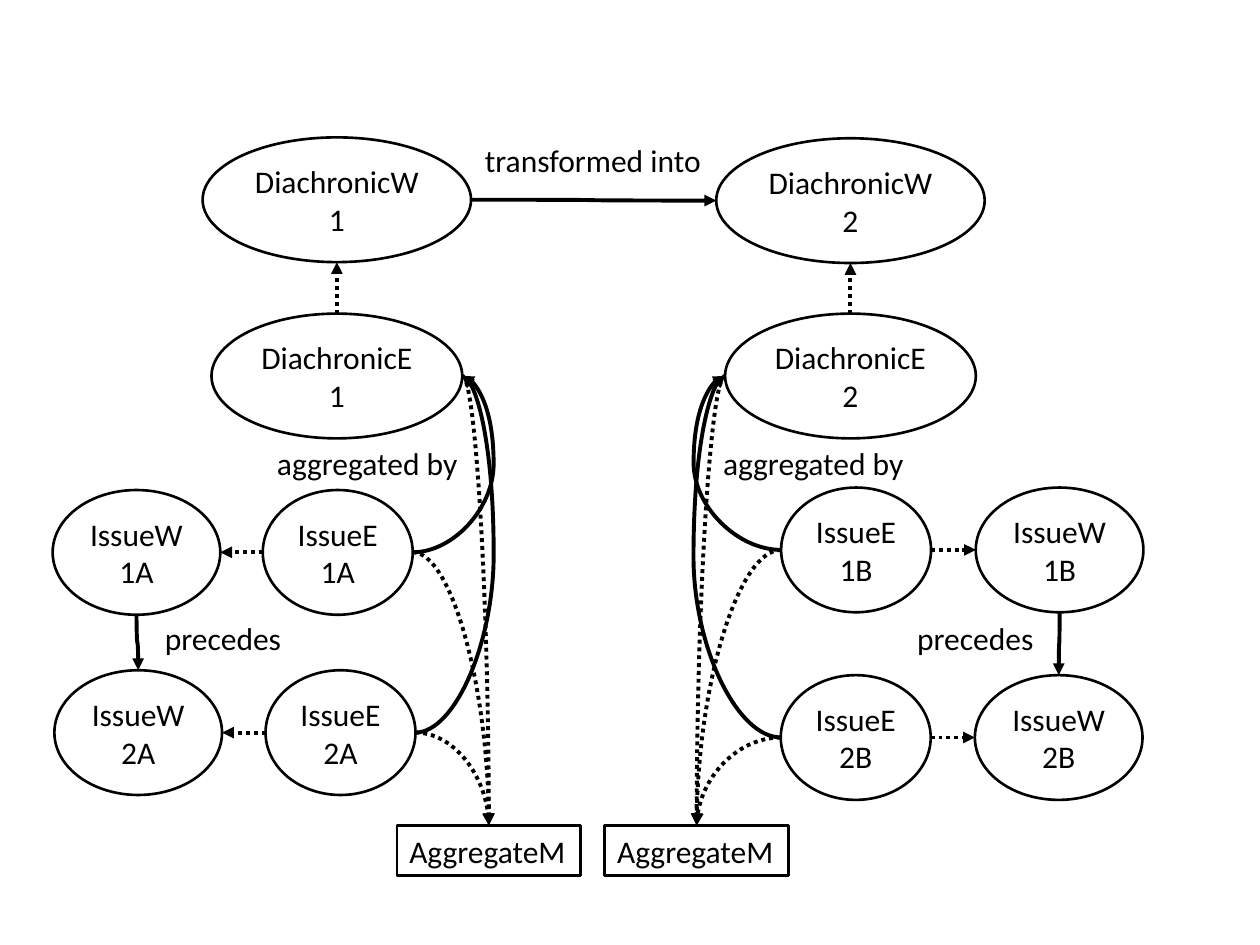
from dataclasses import dataclass

from lxml.etree import SubElement
from pptx import Presentation
from pptx.dml.color import RGBColor
from pptx.enum.dml import MSO_LINE
from pptx.enum.shapes import MSO_CONNECTOR, MSO_SHAPE
from pptx.enum.text import MSO_AUTO_SIZE, PP_ALIGN
from pptx.oxml.ns import qn
from pptx.util import Pt


@dataclass(frozen=True)
class Theme:
    ink: RGBColor = RGBColor(0, 0, 0)
    font: str = "Calibri"
    size: Pt = Pt(18)
    outline: Pt = Pt(1.5)
    arrow: Pt = Pt(2.25)


theme = Theme()
presentation = Presentation()
presentation.slide_width, presentation.slide_height = Pt(720), Pt(540)
slide = presentation.slides.add_slide(presentation.slide_layouts[6])


def write(shape, lines, alignment=PP_ALIGN.LEFT):
    """Fill a shape with one paragraph per line, without wrapping."""
    frame = shape.text_frame
    frame.text = "\n".join(lines)
    frame.word_wrap = False
    frame.auto_size = MSO_AUTO_SIZE.SHAPE_TO_FIT_TEXT
    for paragraph in frame.paragraphs:
        paragraph.alignment = alignment
        paragraph.font.name = theme.font
        paragraph.font.size = theme.size
        paragraph.font.color.rgb = theme.ink


def add_arrow(start, end, dotted=False, vertical=False, corner=False, bulge=None):
    """Curved arrow; bulge is the x position its middle swings out to."""
    (x1, y1), (x2, y2) = start, end
    turn = 0
    if vertical:  # lay the curve flat about its centre, then turn it
        middle_x, middle_y = (x1 + x2) / 2, (y1 + y2) / 2
        half = abs(y2 - y1) / 2
        down = y2 > y1
        turn = 90 if down else 270
        drift = (x1 - x2 if down else x2 - x1) / 2
        x1, x2 = middle_x - half, middle_x + half
        y1, y2 = middle_y - drift, middle_y + drift
    connector = slide.shapes.add_connector(
        MSO_CONNECTOR.CURVE, Pt(x1), Pt(y1), Pt(x2), Pt(y2))
    connector.line.color.rgb = theme.ink
    connector.line.width = theme.arrow
    if dotted:
        connector.line.dash_style = MSO_LINE.ROUND_DOT
    properties = connector._element.spPr
    SubElement(properties.find(qn("a:ln")), qn("a:tailEnd"), type="triangle")
    SubElement(properties, qn("a:effectLst"))
    if turn:
        properties.find(qn("a:xfrm")).set("rot", str(turn * 60000))
    geometry = properties.find(qn("a:prstGeom"))
    if corner:
        geometry.set("prst", "curvedConnector2")
    if bulge is not None:
        share = round(100000 * (bulge - x1) / (x2 - x1))
        SubElement(geometry.find(qn("a:avLst")), qn("a:gd"), name="adj1", fmla=f"val {share}")


# Ellipses: kind, number, centre x, top
widths = {"DiachronicW": 153.4, "DiachronicE": 143.3, "IssueW": 95.8, "IssueE": 85.7}
ellipse_height = 71.3
ellipses = [
    ("DiachronicW", "1", 192.5, 78.5), ("DiachronicW", "2", 486, 79),
    ("DiachronicE", "1", 192.5, 179.2), ("DiachronicE", "2", 486, 179.2),
    ("IssueW", "1A", 78, 280), ("IssueW", "1B", 605.5, 278.6),
    ("IssueW", "2A", 79, 383), ("IssueW", "2B", 605, 385.8),
    ("IssueE", "1A", 193, 280), ("IssueE", "1B", 489.2, 278.6),
    ("IssueE", "2A", 194.6, 383), ("IssueE", "2B", 489, 385.8),
]
sides = {}
for kind, number, center, top in ellipses:
    half = widths[kind] / 2
    shape = slide.shapes.add_shape(
        MSO_SHAPE.OVAL, Pt(center - half), Pt(top), Pt(2 * half), Pt(ellipse_height))
    shape.shadow.inherit = False
    shape.fill.background()
    shape.line.color.rgb = theme.ink
    shape.line.width = theme.outline
    write(shape, [kind, number], PP_ALIGN.CENTER)
    middle = top + ellipse_height / 2
    sides[kind, number] = {
        "top": (center, top), "bottom": (center, top + ellipse_height),
        "left": (center - half, middle), "right": (center + half, middle),
    }

# Aggregate boxes
box_top, box_width, box_height = 471.6, 105.1, 28.8
box_lefts = {"A": 226.8, "B": 345.6}
for left in box_lefts.values():
    shape = slide.shapes.add_shape(
        MSO_SHAPE.RECTANGLE, Pt(left), Pt(box_top), Pt(box_width), Pt(box_height))
    shape.shadow.inherit = False
    shape.fill.background()
    shape.line.color.rgb = theme.ink
    shape.line.width = theme.outline
    write(shape, ["AggregateM"])

# Arrows between the two works
add_arrow(sides["DiachronicW", "1"]["right"], sides["DiachronicW", "2"]["left"])

# Arrows of each half; the inner side faces the middle of the slide
for letter, number, inner, outer, swing in [
        ("A", "1", "right", "left", 18), ("B", "2", "left", "right", -18)]:
    expression = sides["DiachronicE", number]
    hub = expression[inner]
    box = (box_lefts[letter] + box_width / 2, box_top)
    add_arrow(expression["top"], sides["DiachronicW", number]["bottom"],
              dotted=True, vertical=True)
    add_arrow(sides["IssueW", "1" + letter]["bottom"],
              sides["IssueW", "2" + letter]["top"], vertical=True)
    add_arrow(hub, box, dotted=True, corner=True)
    for issue in ("1" + letter, "2" + letter):
        source = sides["IssueE", issue]
        add_arrow(source[outer], sides["IssueW", issue][inner], dotted=True)
        add_arrow(source[inner], hub, bulge=hub[0] + swing)
        add_arrow(source[inner], box, dotted=True, corner=True)

# Relation labels: text, left, top, width
for text, left, top, width in [
        ("transformed into", 270, 77, 139),
        ("precedes", 87.1, 350.1, 82), ("precedes", 517, 350.1, 82),
        ("aggregated by", 151.2, 250, 118.6), ("aggregated by", 406.1, 250, 118.6)]:
    label = slide.shapes.add_textbox(Pt(left), Pt(top), Pt(width), Pt(box_height))
    write(label, [text])

presentation.save("out.pptx")
